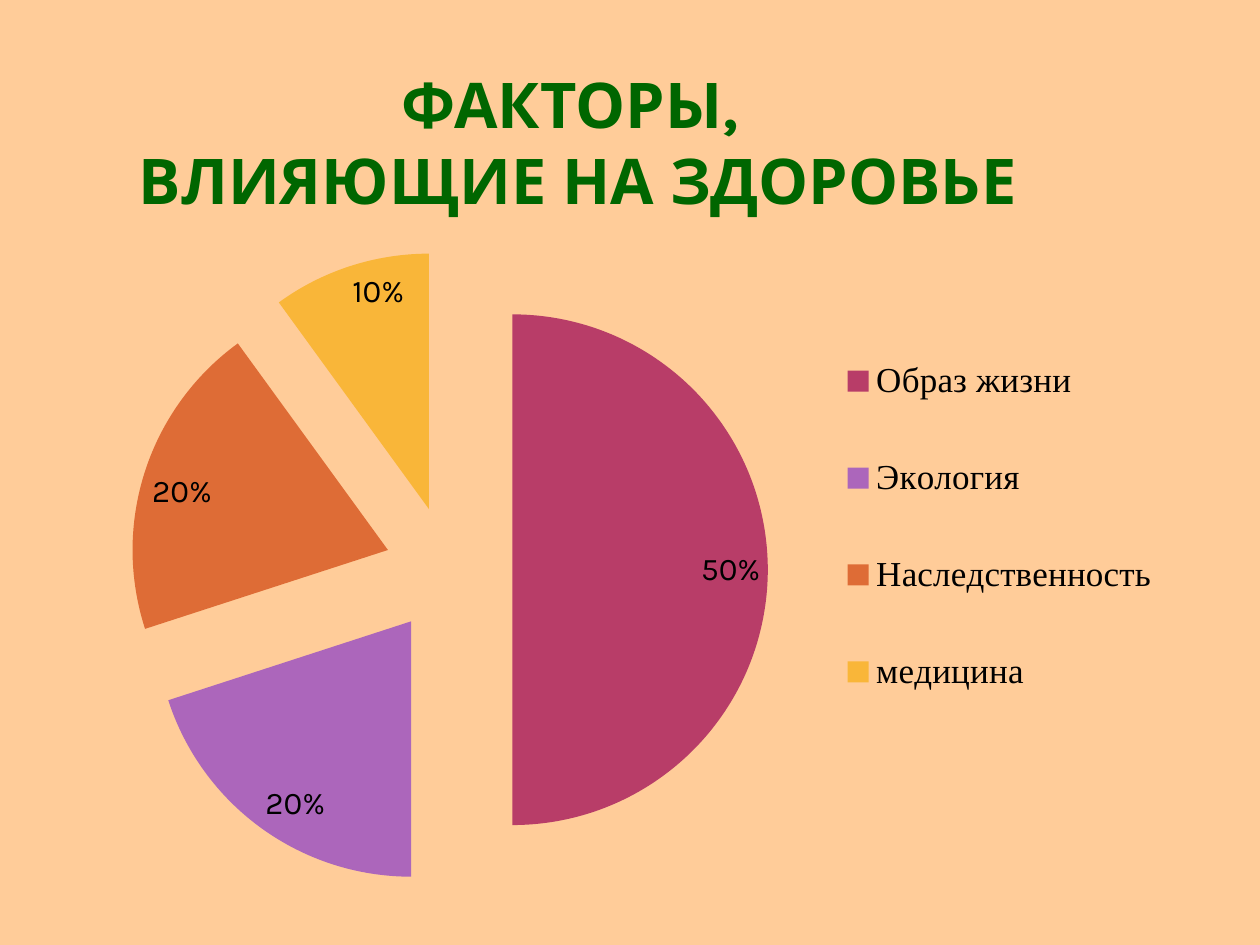
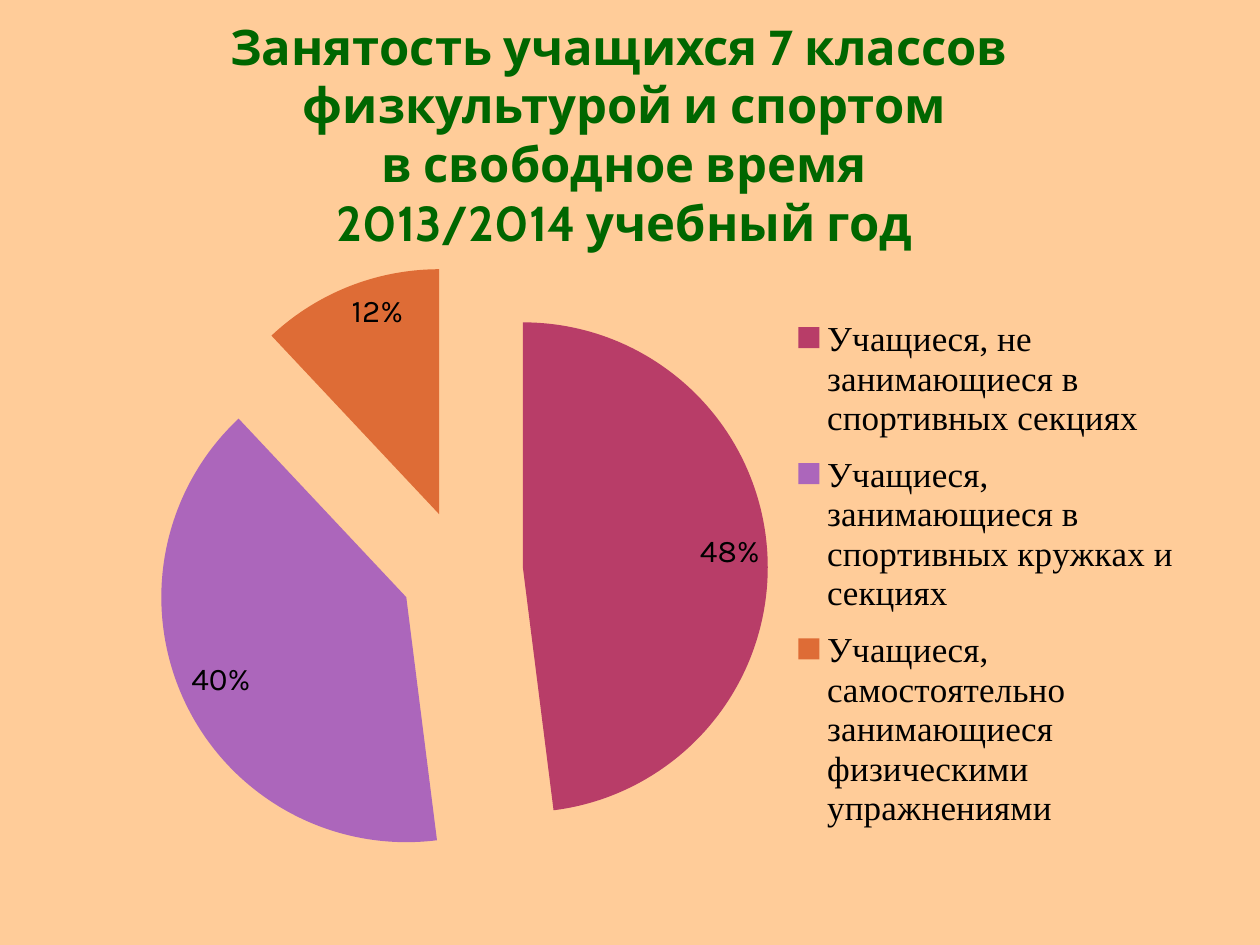
from lxml.etree import SubElement
from pptx import Presentation
from pptx.chart.data import CategoryChartData
from pptx.dml.color import RGBColor
from pptx.enum.chart import XL_CHART_TYPE, XL_LABEL_POSITION, XL_LEGEND_POSITION
from pptx.enum.text import MSO_ANCHOR, MSO_AUTO_SIZE, PP_ALIGN
from pptx.oxml.ns import qn
from pptx.util import Emu, Pt

# Content: boxes are left, top, width, height in px; plot is in chart fractions
SLIDES = [
    dict(
        title="ФАКТОРЫ,\v ВЛИЯЮЩИЕ НА ЗДОРОВЬЕ",
        title_box=(44, 66, 1052, 128), font="Karla", size=36,
        chart_box=(105, 224, 1091, 665),
        plot=(0.02, 0.04, 0.59, 0.96),
        legend_box=(825, 307, 350, 446),
        shares=[("Образ жизни", 0.5), ("Экология", 0.2),
                ("Наследственность", 0.2), ("медицина", 0.1)],
    ),
    dict(
        title="Занятость учащихся 7 классов \vфизкультурой и спортом"
              "\v в свободное время \v2013/2014 учебный год",
        title_box=(74, 16, 1101, 238), font="Cabin", size=28,
        chart_box=(105, 265, 1081, 625),
        plot=(0.03, 0, 0.6, 0.98),
        legend_box=(781, 300, 395, 545),
        shares=[("Учащиеся, не занимающиеся в спортивных секциях", 0.48),
                ("Учащиеся, занимающиеся в спортивных кружках и секциях", 0.4),
                ("Учащиеся, самостоятельно занимающиеся физическими "
                 "упражнениями", 0.12)],
    ),
]

# Shared look
BACKGROUND, TITLE, TEXT = "FFCC99", "006600", "000000"
SLICES = ["B83D68", "AC66BB", "DE6C36", "F9B639"]
EXPLOSION = 25
PX = 914400 / 126


def px(n):
    return Emu(round(n * PX))


def paint(color_format, value):
    color_format.rgb = RGBColor.from_string(value)


def style(font, color, **values):
    for name, value in values.items():
        setattr(font, name, value)
    paint(font.color, color)


def add_title(slide, item):
    sp = slide.shapes.title
    sp.left, sp.top, sp.width, sp.height = map(px, item["title_box"])
    tf = sp.text_frame
    tf.text = item["title"]
    frame = dict(margin_left=Pt(3.6), margin_right=Pt(3.6), margin_top=0,
                 margin_bottom=0, word_wrap=True,
                 auto_size=MSO_AUTO_SIZE.NONE, vertical_anchor=MSO_ANCHOR.TOP)
    for name, value in frame.items():
        setattr(tf, name, value)
    p = tf.paragraphs[0]
    p.alignment = PP_ALIGN.CENTER
    for r in p.runs:
        style(r.font, TITLE, name=item["font"], size=Pt(item["size"]), bold=True)


def set_layout(element, index, fractions, inner=False):
    """Give a plot area or legend a fixed place inside its chart."""
    for old in element.findall(qn("c:layout")):
        element.remove(old)
    layout = SubElement(element, qn("c:layout"))
    element.insert(index, layout)
    manual = SubElement(layout, qn("c:manualLayout"))
    values = [("layoutTarget", "inner")] if inner else []
    values += [("xMode", "edge"), ("yMode", "edge")]
    values += zip("xywh", fractions)
    for tag, value in values:
        SubElement(manual, qn(f"c:{tag}")).set("val", str(value))


def add_pie(slide, item):
    data = CategoryChartData(number_format="0%")
    data.categories = [name for name, _ in item["shares"]]
    data.add_series("Series 1", [share for _, share in item["shares"]])
    chart = slide.shapes.add_chart(
        XL_CHART_TYPE.PIE, *map(px, item["chart_box"]), data).chart
    chart.has_title = False
    style(chart.font, TEXT, name="Karla", size=Pt(18))

    # Slices
    plot = chart.plots[0]
    plot.vary_by_categories = True
    series = plot.series[0]
    ser = series._element
    explosion = SubElement(ser, qn("c:explosion"))
    explosion.set("val", str(EXPLOSION))
    ser.find(qn("c:cat")).addprevious(explosion)
    for i, color in enumerate(SLICES[:len(item["shares"])]):
        fill = series.points[i].format.fill
        fill.solid()
        paint(fill.fore_color, color)

    # Labels
    plot.has_data_labels = True
    labels = plot.data_labels
    for name, value in dict(show_value=True, show_percentage=False,
                            number_format="0%", number_format_is_linked=False,
                            position=XL_LABEL_POSITION.INSIDE_END).items():
        setattr(labels, name, value)
    style(labels.font, TEXT, name="Karla", size=Pt(18))

    # Legend and placement
    chart.has_legend = True
    legend = chart.legend
    legend.position = XL_LEGEND_POSITION.RIGHT
    legend.include_in_layout = False
    style(legend.font, TEXT, name="Times New Roman", size=Pt(20))
    left, top, width, height = item["chart_box"]
    x, y, w, h = item["legend_box"]
    place = [round(v, 2) for v in ((x - left) / width, (y - top) / height,
                                   w / width, h / height)]
    set_layout(legend._element, 1, place)
    plot_area = chart._chartSpace.chart.plotArea
    set_layout(plot_area, 0, item["plot"], inner=True)


def main():
    prs = Presentation()
    prs.slide_width, prs.slide_height = px(1260), px(945)
    fill = prs.slide_master.background.fill
    fill.solid()
    paint(fill.fore_color, BACKGROUND)
    for item in SLIDES:
        slide = prs.slides.add_slide(prs.slide_layouts[5])
        add_title(slide, item)
        add_pie(slide, item)
    prs.save("out.pptx")


if __name__ == "__main__":
    main()
